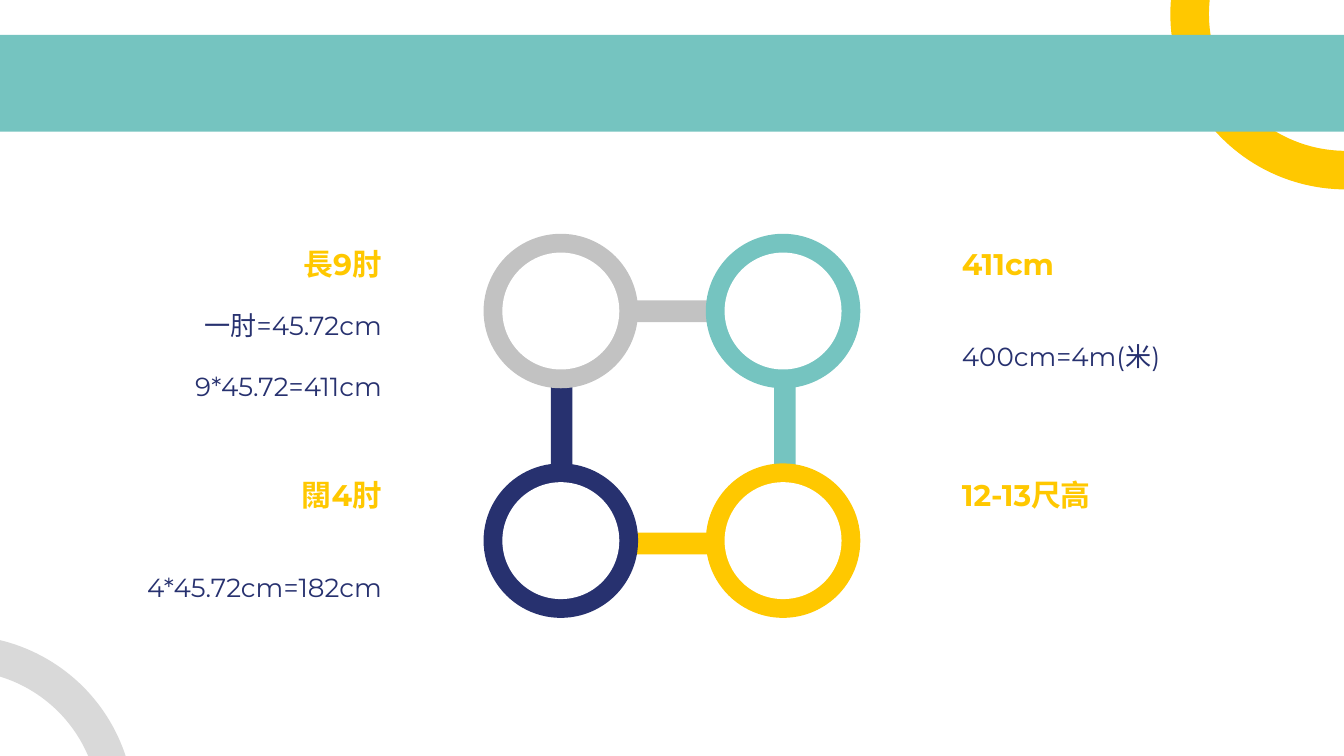
from pptx import Presentation
from pptx import util as u
from pptx.dml.color import RGBColor
from pptx.enum import shapes, text

TEAL, GOLD, NAVY = "75C4C0", "FFC800", "27316F"
GREY, PALE, WHITE = "C2C2C2", "D9D9D9", "FFFFFF"
KIND = shapes.MSO_SHAPE
ALIGN = text.PP_ALIGN


def tint(code):
    return RGBColor.from_string(code)


class Board:
    font = "Montserrat"
    inset = u.Cm(0.25)

    def __init__(self, slide):
        self.slide = slide

    def form(self, kind, x, y, w, h, fill):
        item = self.slide.shapes.add_shape(kind, u.Cm(x), u.Cm(y), u.Cm(w), u.Cm(h))
        item.shadow.inherit = False
        item.fill.solid()
        item.fill.fore_color.rgb = tint(fill)
        item.line.fill.background()
        return item

    def arc(self, x, y, size, fill, turn, marks):
        item = self.form(KIND.BLOCK_ARC, x, y, size, size, fill)
        item.rotation = turn
        for i, mark in enumerate(marks):
            item.adjustments[i] = mark

    def label(self, x, y, w, h, lines, size, fill, align, bold=False):
        box = self.slide.shapes.add_textbox(u.Cm(x), u.Cm(y), u.Cm(w), u.Cm(h))
        frame = box.text_frame
        frame.word_wrap = True
        frame.margin_left = frame.margin_right = self.inset
        frame.margin_top = frame.margin_bottom = self.inset
        frame.vertical_anchor = text.MSO_ANCHOR.TOP if bold else text.MSO_ANCHOR.MIDDLE
        frame.text = "\n".join(lines)
        for para in frame.paragraphs:
            para.alignment = align
            para.space_after = u.Pt(16)
            for run in para.runs:
                run.font.name = self.font
                run.font.size = u.Pt(size)
                run.font.bold = bold
                run.font.color.rgb = tint(fill)


def main():
    deck = Presentation()
    deck.slide_width, deck.slide_height = u.Cm(25.4), u.Cm(14.29)
    board = Board(deck.slides.add_slide(deck.slide_layouts[6]))

    # Backdrop: corner arcs and title band
    board.arc(22.12, -3.05, 6.63, GOLD, 270, (108.21, 165.56, 0.11))
    board.form(KIND.RECTANGLE, -0.43, 0.66, 26.26, 1.83, TEAL)
    board.arc(-4.09, 12.01, 6.63, PALE, 345, (175.07, 215.56, 0.1))

    # Links between the rings
    long, thin = 1.65, 0.41
    for x, y, w, h, fill in (
        (10.41, 7.24, thin, long, NAVY),
        (11.82, 5.68, long, thin, GREY),
        (14.63, 7.21, thin, long, TEAL),
        (11.95, 10.07, long, thin, GOLD),
    ):
        board.form(KIND.RECTANGLE, x, y, w, h, fill)

    # Rings: a disc with a white hole in its centre
    disc, hole = 2.92, 2.21
    gap = (disc - hole) / 2
    for y, fills in ((4.42, (GREY, TEAL)), (8.76, (NAVY, GOLD))):
        for x, fill in zip((9.14, 13.34), fills):
            board.form(KIND.OVAL, x, y, disc, disc, fill)
            board.form(KIND.OVAL, x + gap, y + gap, hole, hole, WHITE)

    # Headings with their sums below
    left, right = (2.34, ALIGN.RIGHT), (17.93, ALIGN.LEFT)
    upper, lower = 4.39, 8.76
    wide, head, body = 5.13, 1.09, 2.49
    for (x, align), y, title, lines in (
        (left, upper, "長9肘", ["一肘=45.72cm", "9*45.72=411cm"]),
        (left, lower, "闊4肘", ["4*45.72cm=182cm"]),
        (right, upper, "411cm", ["400cm=4m(米)"]),
        (right, lower, "12-13尺高", []),
    ):
        board.label(x, y, wide, head, [title], 16, GOLD, align, bold=True)
        if lines:
            board.label(x, y + head, wide, body, lines, 14, NAVY, align)

    deck.save("out.pptx")


if __name__ == "__main__":
    main()
